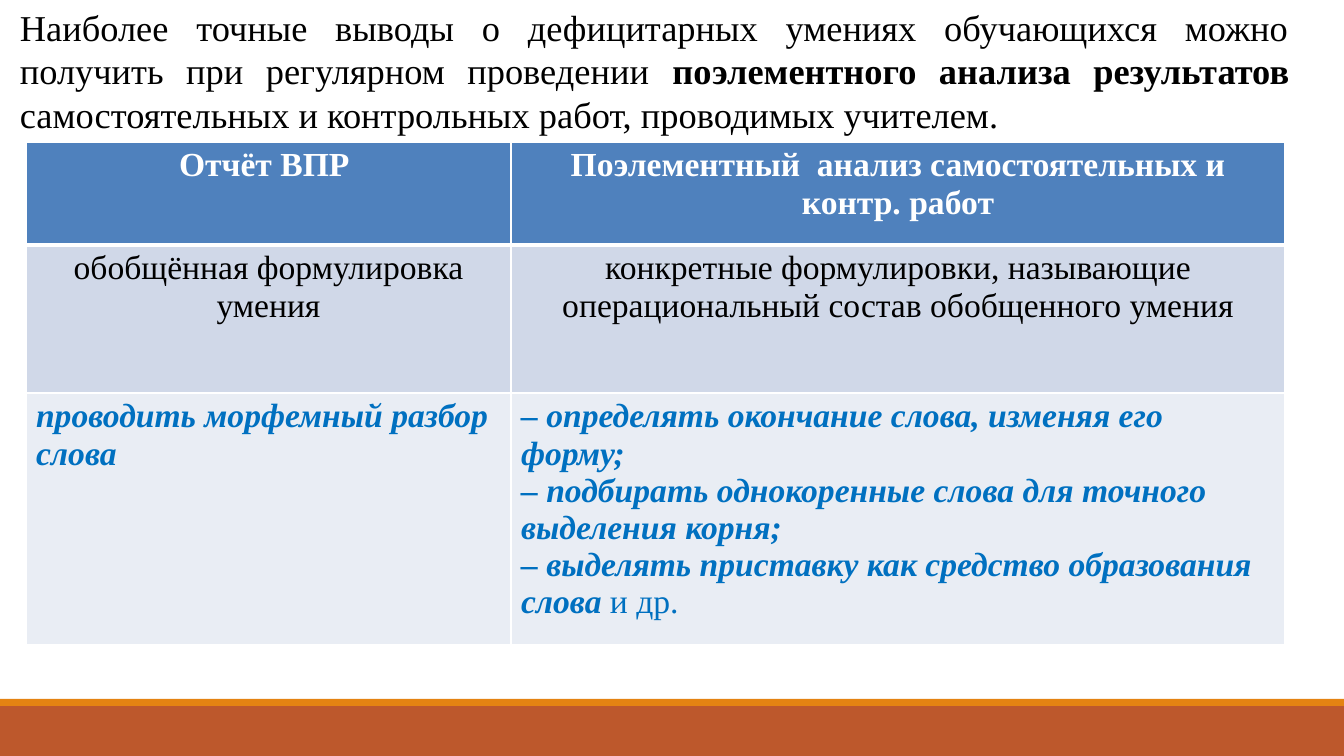
from lxml.etree import SubElement
from pptx import Presentation
from pptx.dml.color import RGBColor
from pptx.enum.shapes import MSO_SHAPE
from pptx.enum.text import MSO_AUTO_SIZE, PP_ALIGN
from pptx.oxml.ns import qn
from pptx.util import Pt

WHITE = RGBColor(0xFF, 0xFF, 0xFF)
BLACK = RGBColor(0, 0, 0)
BLUE = RGBColor(0x00, 0x70, 0xC0)
HEAD = RGBColor(0x4F, 0x81, 0xBD)
BAND = RGBColor(0xD0, 0xD8, 0xE8)
PALE = RGBColor(0xE9, 0xED, 0xF4)
RUST = RGBColor(0xBD, 0x58, 0x2C)
ORANGE = RGBColor(0xE4, 0x83, 0x12)

FONT = "Times New Roman"
WIDE, HIGH = 1344, 756
EMU = 914400 / 100.8

BARS = [(706, 50, RUST), (699, 7, ORANGE)]  # top, height, colour

# A paragraph is a list of runs: text, then whether it is stressed.
INTRO = [
    ("Наиболее точные выводы о дефицитарных умениях обучающихся можно "
     "получить при регулярном проведении ", False),
    ("поэлементного анализа результатов ", True),
    ("самостоятельных и контрольных работ, проводимых учителем.", False),
]
ROWS = [
    [[[("Отчёт ВПР ", True)]],
     [[("Поэлементный  анализ самостоятельных и контр. работ", True)]]],
    [[[("обобщённая формулировка умения", False)]],
     [[("конкретные формулировки, называющие операциональный состав "
        "обобщенного умения", False)]]],
    [[[("проводить морфемный разбор слова", True)]],
     [[("– определять окончание слова, изменяя его форму;", True)],
      [("– подбирать однокоренные слова для точного выделения корня;", True)],
      [("– выделять приставку как средство образования слова ", True),
       ("и др.", False)]]],
]
# Per row: height, fill, text colour, alignment, italic stress, top and bottom line
STYLES = [
    (103, HEAD, WHITE, PP_ALIGN.CENTER, False, 1, 3),
    (148, BAND, BLACK, PP_ALIGN.CENTER, False, 3, 1),
    (252, PALE, BLUE, PP_ALIGN.LEFT, True, 1, 1),
]
COLS = [485, 774]
LEFT, TOP = 26, 142


def px(n):
    return round(n * EMU)


def box(*sides):
    return [px(n) for n in sides]


def write(para, runs, size, color, align, slant=False):
    para.alignment = align
    for text, stress in runs:
        run = para.add_run()
        run.text = text
        look = dict(name=FONT, size=Pt(size), bold=stress,
                    italic=stress and slant)
        for key, value in look.items():
            setattr(run.font, key, value)
        run.font.color.rgb = color


def edge(cell, widths):
    """Draw white cell borders; widths maps L, R, T, B to points."""
    props = cell._tc.get_or_add_tcPr()
    for side, width in widths.items():
        line = SubElement(props, qn("a:ln" + side), w=str(Pt(width)))
        fill = SubElement(line, qn("a:solidFill"))
        SubElement(fill, qn("a:srgbClr"), val=str(WHITE))


def add_bars(slide):
    for top, high, color in BARS:
        bar = slide.shapes.add_shape(
            MSO_SHAPE.RECTANGLE, *box(0, top, WIDE, high))
        bar.shadow.inherit = False
        bar.fill.solid()
        bar.fill.fore_color.rgb = color
        bar.line.fill.background()


def add_intro(slide):
    frame = slide.shapes.add_textbox(*box(10, 0, 1290, 142)).text_frame
    frame.word_wrap = True
    frame.auto_size = MSO_AUTO_SIZE.NONE
    write(frame.paragraphs[0], INTRO, 26, BLACK, PP_ALIGN.JUSTIFY)


def add_grid(slide):
    high = sum(style[0] for style in STYLES)
    grid = slide.shapes.add_table(
        len(ROWS), len(COLS), *box(LEFT, TOP, sum(COLS), high)).table
    for col, wide in zip(grid.columns, COLS):
        col.width = px(wide)
    for row, cells, style in zip(grid.rows, ROWS, STYLES):
        high, fill, color, align, slant, above, below = style
        row.height = px(high)
        for cell, paras in zip(row.cells, cells):
            edge(cell, dict(L=1, R=1, T=above, B=below))
            cell.fill.solid()
            cell.fill.fore_color.rgb = fill
            frame = cell.text_frame
            for i, runs in enumerate(paras):
                para = frame.add_paragraph() if i else frame.paragraphs[0]
                write(para, runs, 24, color, align, slant)


def main():
    deck = Presentation()
    deck.slide_width, deck.slide_height = box(WIDE, HIGH)
    slide = deck.slides.add_slide(deck.slide_layouts[6])
    add_bars(slide)
    add_intro(slide)
    add_grid(slide)
    deck.save("out.pptx")


if __name__ == "__main__":
    main()
